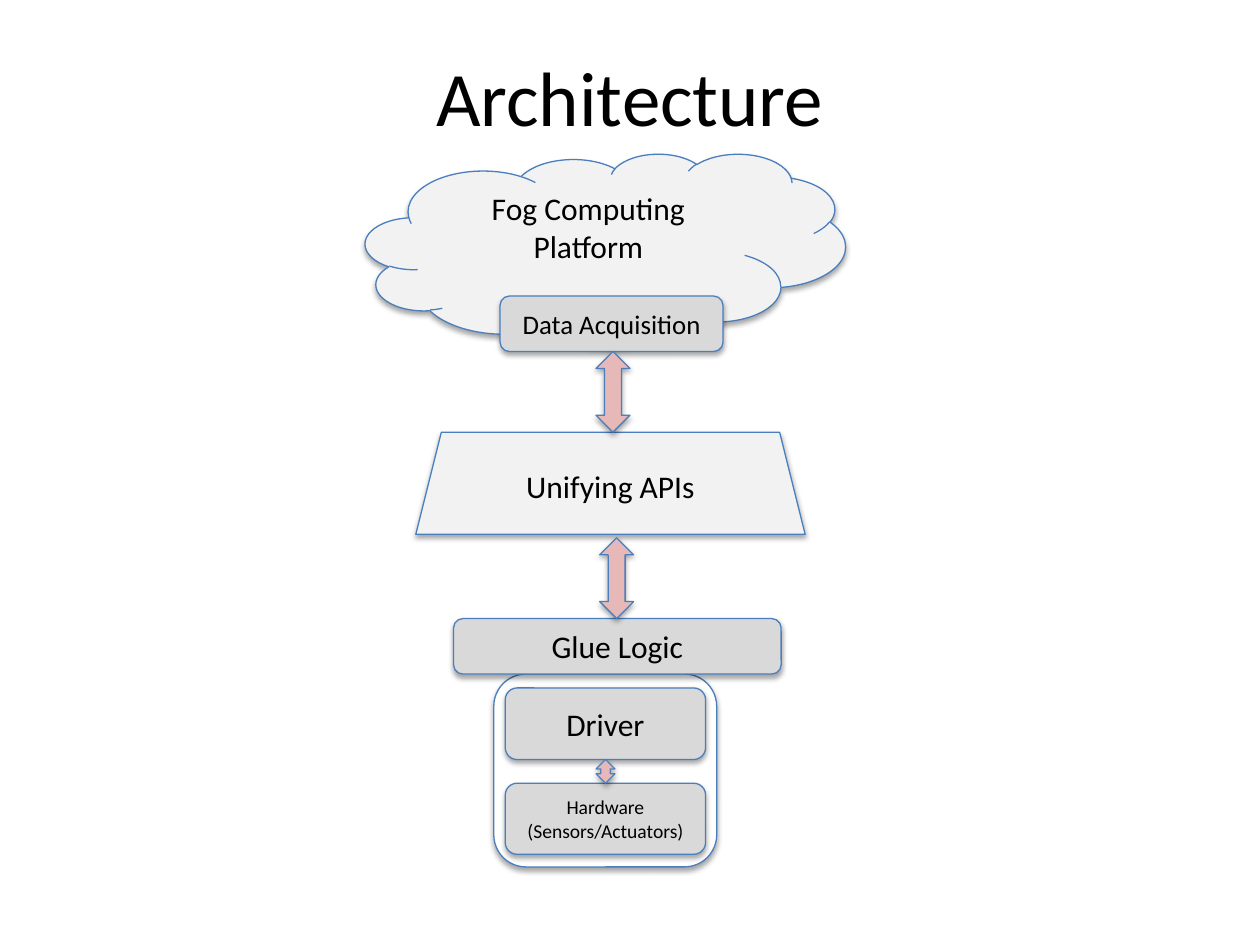
"""Build the fog computing architecture slide."""
from dataclasses import dataclass
from typing import Optional, Union

from lxml import etree
from pptx import Presentation
from pptx.dml.color import RGBColor
from pptx.enum.shapes import MSO_SHAPE
from pptx.enum.text import MSO_ANCHOR, PP_ALIGN
from pptx.oxml.ns import qn
from pptx.shapes.autoshape import Shape
from pptx.shapes.shapetree import GroupShapes, SlideShapes
from pptx.text.text import TextFrame
from pptx.util import Pt

ROUNDED = MSO_SHAPE.ROUNDED_RECTANGLE
CLOUD = MSO_SHAPE.CLOUD
TRAPEZOID = MSO_SHAPE.TRAPEZOID
ARROW = MSO_SHAPE.UP_DOWN_ARROW
TOP, MIDDLE = MSO_ANCHOR.TOP, MSO_ANCHOR.MIDDLE
CENTER = PP_ALIGN.CENTER
TITLE_ONLY = 5


@dataclass(frozen=True)
class Theme:
    font: str = "Calibri"
    ink: str = "000000"
    outline: str = "4B7EBC"
    link_outline: str = "4F81BD"
    platform: str = "F2F2F2"
    component: str = "D9D9D9"
    link: str = "E6B9B8"
    device: str = "FFFFFF"
    title_size: float = 44
    label_size: float = 18
    acquisition_size: float = 15.3
    hardware_size: float = 11.2
    line_width: float = 0.75
    shadow_blur: float = 3.1
    shadow_distance: float = 1.8
    shadow_alpha: int = 35


THEME = Theme()


@dataclass(frozen=True)
class Block:
    kind: MSO_SHAPE
    left: float
    top: float
    width: float
    height: float
    fill: str
    label: str = ""
    size: float = THEME.label_size
    anchor: MSO_ANCHOR = MIDDLE
    outline: str = THEME.outline


def link(left: float, top: float, width: float = 19.4, height: float = 46.1,
         outline: str = THEME.outline) -> Block:
    return Block(ARROW, left, top, width, height, THEME.link, outline=outline)


PLATFORM_BLOCKS = [
    Block(TRAPEZOID, 237.6, 247, 222.5, 58.3, THEME.platform, "Unifying APIs"),
    Block(CLOUD, 208.8, 87.8, 274.3, 109.4, THEME.platform,
          "Fog Computing Platform", anchor=TOP),
    Block(ROUNDED, 285.8, 169.2, 127.4, 31.7, THEME.component,
          "Data Acquisition", THEME.acquisition_size),
    link(340.6, 200.9),
]
DEVICE_BLOCKS = [
    Block(ROUNDED, 282.2, 385.2, 127.4, 110.2, THEME.device),
    Block(ROUNDED, 288.7, 447.6, 114.5, 40.6, THEME.component,
          "Hardware (Sensors/Actuators)", THEME.hardware_size),
    Block(ROUNDED, 288.7, 393.1, 114.5, 40.9, THEME.component, "Driver"),
    link(340.6, 434, 10.8, 13.6, THEME.link_outline),
]
GLUE_BLOCKS = [
    Block(ROUNDED, 259.2, 353.5, 187.2, 31.7, THEME.component, "Glue Logic"),
    link(342.7, 307.4),
]


def write(frame: TextFrame, text: str, size: float, anchor: MSO_ANCHOR) -> None:
    frame.word_wrap = True
    frame.vertical_anchor = anchor
    paragraph = frame.paragraphs[0]
    paragraph.alignment = CENTER
    run = paragraph.add_run()
    run.text = text
    run.font.name = THEME.font
    run.font.size = Pt(size)
    run.font.color.rgb = RGBColor.from_string(THEME.ink)


def cast_shadow(shape: Shape) -> None:
    shape.shadow.inherit = False
    effects = shape.element.spPr.find(qn("a:effectLst"))
    shadow = etree.SubElement(
        effects, qn("a:outerShdw"), blurRad=str(Pt(THEME.shadow_blur)),
        dist=str(Pt(THEME.shadow_distance)), dir="5400000", rotWithShape="0")
    color = etree.SubElement(shadow, qn("a:srgbClr"), val=THEME.ink)
    etree.SubElement(color, qn("a:alpha"), val=str(THEME.shadow_alpha * 1000))


def draw(shapes: Union[SlideShapes, GroupShapes], block: Block) -> None:
    shape = shapes.add_shape(block.kind, Pt(block.left), Pt(block.top),
                             Pt(block.width), Pt(block.height))
    shape.fill.solid()
    shape.fill.fore_color.rgb = RGBColor.from_string(block.fill)
    shape.line.color.rgb = RGBColor.from_string(block.outline)
    shape.line.width = Pt(THEME.line_width)
    cast_shadow(shape)
    if block.label:
        write(shape.text_frame, block.label, block.size, block.anchor)


def draw_all(shapes: Union[SlideShapes, GroupShapes], blocks: list[Block]) -> None:
    for block in blocks:
        draw(shapes, block)


def main() -> None:
    deck = Presentation()
    deck.slide_width, deck.slide_height = Pt(720), Pt(540)
    slide = deck.slides.add_slide(deck.slide_layouts[TITLE_ONLY])
    title = slide.shapes.title
    title.left, title.top = Pt(36), Pt(21.6)
    title.width, title.height = Pt(648), Pt(66.2)
    write(title.text_frame, "Architecture", THEME.title_size, MIDDLE)
    draw_all(slide.shapes, PLATFORM_BLOCKS)
    draw_all(slide.shapes.add_group_shape().shapes, DEVICE_BLOCKS)
    draw_all(slide.shapes, GLUE_BLOCKS)
    deck.save("out.pptx")


if __name__ == "__main__":
    main()
